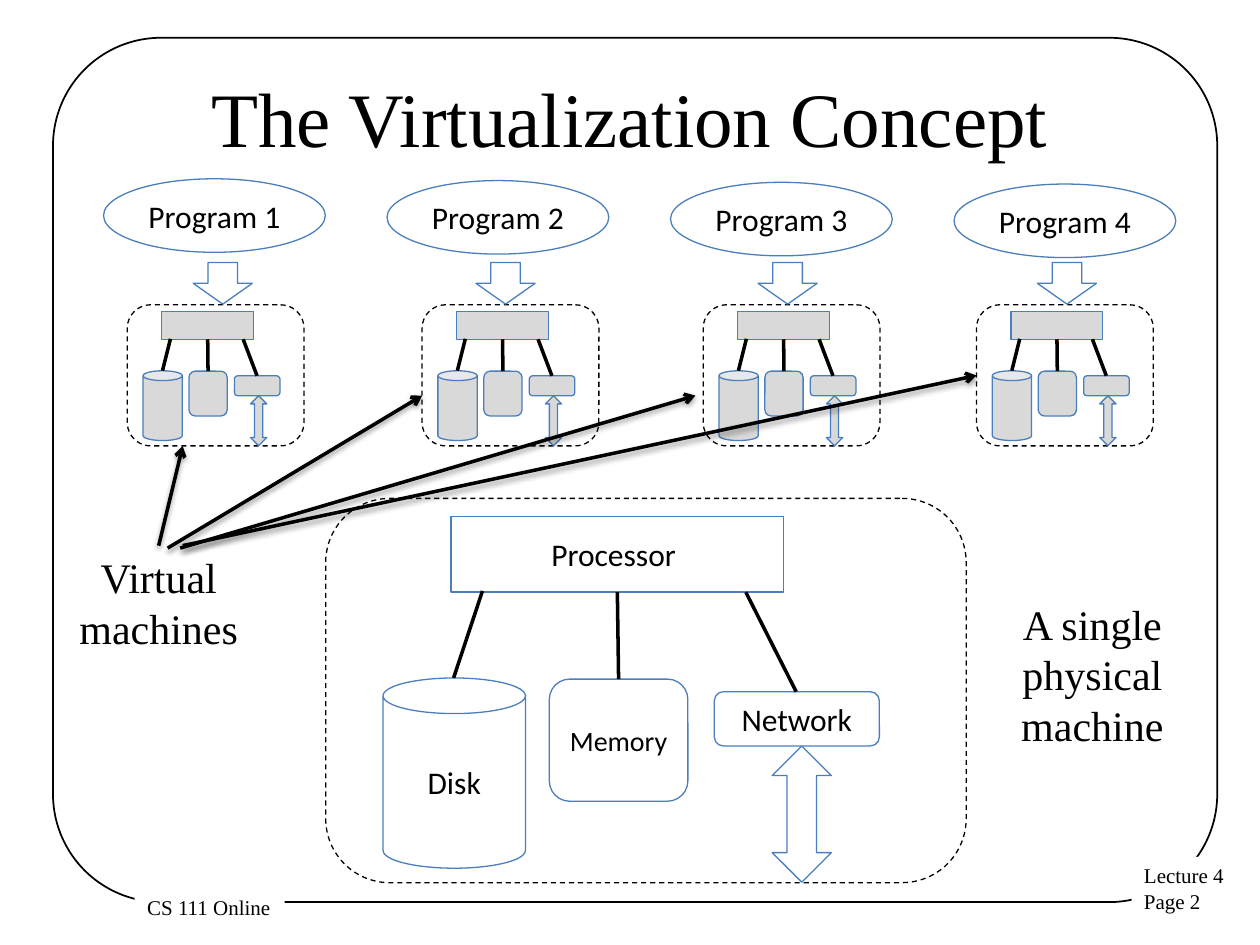
from dataclasses import dataclass

from lxml.etree import SubElement
from pptx import Presentation
from pptx.dml.color import RGBColor
from pptx.enum.dml import MSO_LINE
from pptx.enum.shapes import MSO_CONNECTOR, MSO_SHAPE
from pptx.enum.text import MSO_ANCHOR, MSO_AUTO_SIZE, PP_ALIGN
from pptx.oxml.ns import qn
from pptx.util import Pt


@dataclass(frozen=True)
class Theme:
    ink: RGBColor = RGBColor(0, 0, 0)
    paper: RGBColor = RGBColor(255, 255, 255)
    blue: RGBColor = RGBColor(0x4B, 0x7E, 0xBC)
    gray: RGBColor = RGBColor(0xD9, 0xD9, 0xD9)
    serif: str = "Times New Roman"
    sans: str = "Calibri"
    title: int = 44
    note: int = 24
    label: int = 18
    small: int = 16
    foot: int = 12
    thin: float = 0.75
    frame: float = 1
    bold: float = 2


T = Theme()

# Machine layout at full size, relative to its outer box
BOX = (366, 219.6)
PARTS = [
    (MSO_SHAPE.RECTANGLE, (71.6, 10.4, 190, 43.2), "Processor ", T.label),
    (MSO_SHAPE.ROUNDED_RECTANGLE, (127.8, 103.3, 79.2, 69.8), "Memory ", T.small),
    (MSO_SHAPE.CAN, (32.8, 102.6, 81.4, 108.7), "Disk", T.label),
    (MSO_SHAPE.ROUNDED_RECTANGLE, (222.1, 110.5, 94.3, 31), "Network", T.label),
    (MSO_SHAPE.UP_DOWN_ARROW, (255.2, 141.5, 33.8, 77.8), "", T.label),
]
WIRES = [
    (166.7, 53.6, 167.4, 103.3),
    (89.6, 52.9, 73.1, 102.6),
    (240.1, 53.6, 268.9, 110.5),
]


def write(frame, lines, size, font, align=PP_ALIGN.CENTER):
    """Fill a text frame, one paragraph for each line."""
    for i, line in enumerate(lines):
        para = frame.paragraphs[0] if i == 0 else frame.add_paragraph()
        para.alignment = align
        run = para.add_run()
        run.text = line
        run.font.size = Pt(size)
        run.font.name = font
        run.font.color.rgb = T.ink


def shape(on, kind, at, fill=None, line=T.blue, width=T.thin):
    item = on.add_shape(kind, *map(Pt, at))
    item.shadow.inherit = False
    if fill is None:
        item.fill.background()
    else:
        item.fill.solid()
        item.fill.fore_color.rgb = fill
    item.line.color.rgb = line
    item.line.width = Pt(width)
    return item


def label(item, text, size):
    item.text_frame.word_wrap = True
    item.text_frame.vertical_anchor = MSO_ANCHOR.MIDDLE
    write(item.text_frame, [text], size, T.sans)


def note(on, at, lines, size, align=PP_ALIGN.CENTER, wrap=True, fill=None):
    box = on.add_textbox(*map(Pt, at))
    box.text_frame.word_wrap = wrap
    box.text_frame.auto_size = MSO_AUTO_SIZE.SHAPE_TO_FIT_TEXT
    if fill is not None:
        box.fill.solid()
        box.fill.fore_color.rgb = fill
    write(box.text_frame, lines, size, T.serif, align)


def wire(on, ends, arrow=False):
    """Draw a plain line, or an arrow with a soft shadow."""
    item = on.add_connector(MSO_CONNECTOR.STRAIGHT, *map(Pt, ends))
    item.line.color.rgb = T.ink
    item.line.width = Pt(T.bold)
    props = item._element.spPr
    glow = SubElement(props, qn("a:effectLst"))
    if arrow:
        SubElement(props.find(qn("a:ln")), qn("a:tailEnd"), type="arrow")
        cast = SubElement(glow, qn("a:outerShdw"), blurRad=str(Pt(3.1)),
                          dist=str(Pt(1.6)), dir="5400000", rotWithShape="0")
        tint = SubElement(cast, qn("a:srgbClr"), val=str(T.ink))
        SubElement(tint, qn("a:alpha"), val="38000")


def machine(on, left, top, wide, high, fill=None, named=False):
    """Draw a grouped machine, scaled into the given box."""
    group = on.add_group_shape().shapes
    sx, sy = wide / BOX[0], high / BOX[1]

    def fit(vals, x=0, y=0):
        a, b, c, d = vals
        return x + a * sx, y + b * sy, c * sx, d * sy

    # The outer box is an upright shape turned by a quarter
    shift = (wide - high) / 2
    outer = shape(group, MSO_SHAPE.ROUNDED_RECTANGLE,
                  (left + shift, top - shift, high, wide), line=T.ink)
    outer.rotation = 90
    outer.line.dash_style = MSO_LINE.DASH

    for kind, at, text, size in PARTS:
        item = shape(group, kind, fit(at, left, top), fill)
        if named and text:
            label(item, text, size)
    for ends in WIRES:
        x1, y1, x2, y2 = fit(ends)
        wire(group, (left + x1, top + y1, left + x2, top + y2))


def main():
    deck = Presentation()
    deck.slide_width, deck.slide_height = Pt(720), Pt(540)
    slide = deck.slides.add_slide(deck.slide_layouts[5])
    on = slide.shapes

    # Frame and footers
    edge = shape(on, MSO_SHAPE.ROUNDED_RECTANGLE, (30.3, 21.6, 665.3, 493.9),
                 line=T.ink, width=T.frame)
    edge.adjustments[0] = 0.125
    note(on, (646.6, 489.6, 61.2, 36.7), ["Lecture 4", "Page 2"], T.foot,
         PP_ALIGN.LEFT, False, T.paper)
    note(on, (77, 507.6, 85.7, 21.6), ["CS 111 Online"], T.foot,
         PP_ALIGN.LEFT, False, T.paper)

    # Title
    head = on.title
    head.left, head.top, head.width, head.height = map(Pt, (36, 21.6, 648, 90))
    head.text_frame.vertical_anchor = MSO_ANCHOR.MIDDLE
    write(head.text_frame, ["The Virtualization Concept"], T.title, T.serif)

    # Physical machine
    machine(on, 186.1, 284.8, *BOX, named=True)

    # Programs, each above its virtual machine
    spots = [(72.7, 110.4), (241.2, 272), (401.8, 433.2), (558, 592.8)]
    for i, (left, down) in enumerate(spots):
        oval = shape(on, MSO_SHAPE.OVAL, (59.2 + 162 * i, 102.2 + i, 126.7, 42))
        label(oval, f"Program {i + 1}", T.label)
        machine(on, left, 174.2, 101, 80.6, fill=T.gray)
        shape(on, MSO_SHAPE.DOWN_ARROW, (down, 150, 33.8, 23.8), T.paper)

    # Notes and pointers
    note(on, (36, 311.8, 109.4, 65.5), ["Virtual machines "], T.note)
    note(on, (569.5, 338.4, 109.4, 94.3), ["A single physical machine"], T.note)
    for ends in [(90.7, 311.8, 104.4, 254.9), (95.8, 313.2, 241.2, 226.1),
                 (103, 313.2, 397.4, 226.1), (104.4, 311.8, 558, 214.6)]:
        wire(on, ends, arrow=True)

    deck.save("out.pptx")


if __name__ == "__main__":
    main()
